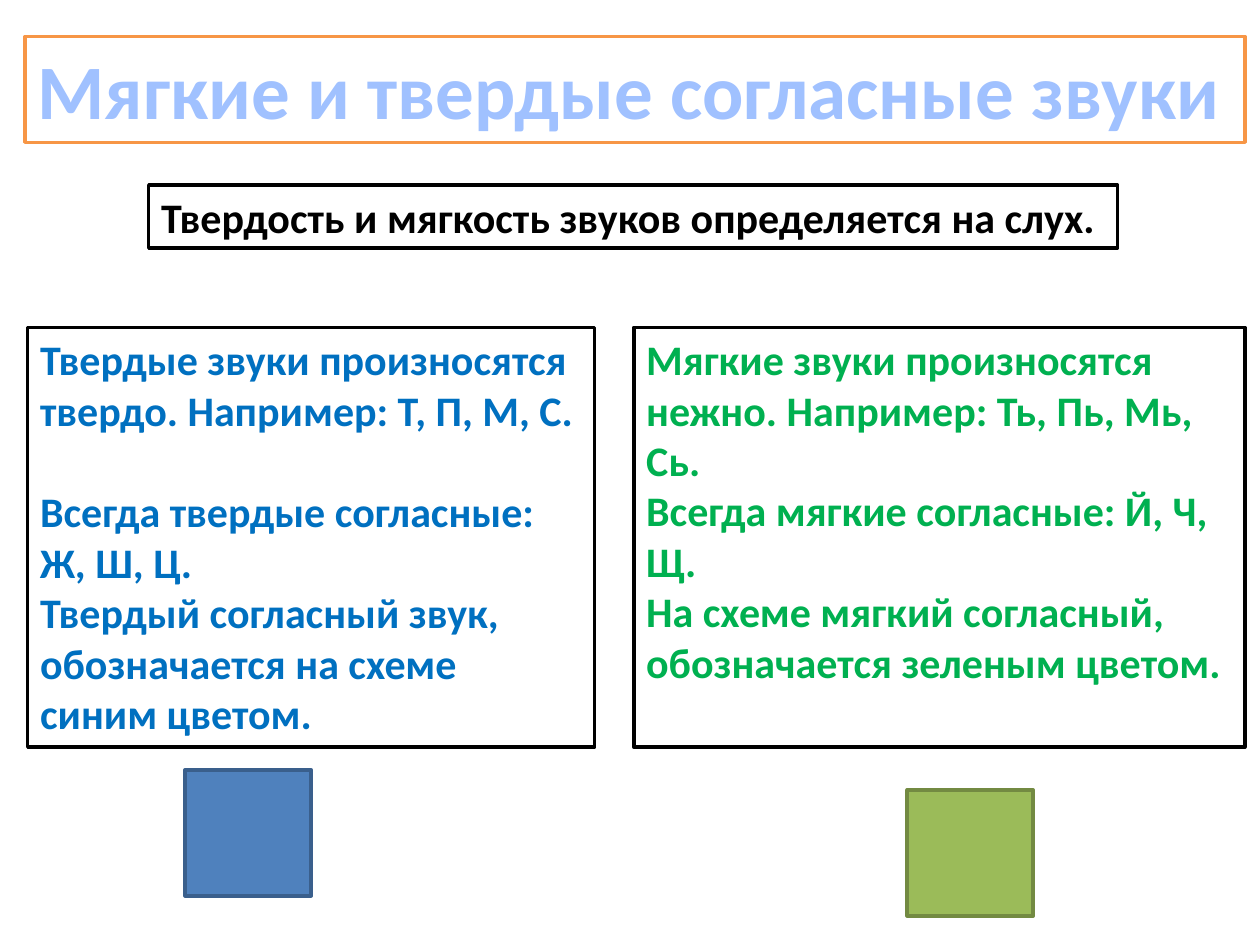
from dataclasses import dataclass

from lxml import etree
from pptx import Presentation
from pptx import util as u
from pptx.dml.color import RGBColor
from pptx.enum import shapes, text
from pptx.oxml import parse_xml

WIDTH, HEIGHT = 10, 7.5
LEFT, RIGHT = 0.22, 9.88
COLUMNS_TOP, COLUMNS_HEIGHT = 2.6, 3.33
BODY_SIZE = 24
BLANK_LINE = 29.3
DRAWING_NS = "http://schemas.openxmlformats.org/drawingml/2006/main"
TITLE_GRADIENT = ((0, "BFD3F9"), (9, "A0C1FF"), (50, "003D85"), (79, "A0C1FF"), (100, "BFD3F9"))


@dataclass
class Frame:
    left: float
    top: float
    width: float
    height: float
    fill: str
    line: str


@dataclass
class Note:
    frame: Frame
    paragraphs: tuple[str, ...]
    color: str
    size: float = BODY_SIZE
    gap_before: int | None = None  # index of the paragraph set one line lower


def rgb(color: str) -> RGBColor:
    return RGBColor.from_string(color)


def draw_frame(slide, frame: Frame):
    box = slide.shapes.add_shape(
        shapes.MSO_SHAPE.RECTANGLE,
        *(u.Inches(v) for v in (frame.left, frame.top, frame.width, frame.height)))
    box.shadow.inherit = False
    box.fill.solid()
    box.fill.fore_color.rgb = rgb(frame.fill)
    box.line.color.rgb = rgb(frame.line)
    box.line.width = u.Pt(2)
    return box


def draw_note(slide, note: Note):
    body = draw_frame(slide, note.frame).text_frame
    body.word_wrap = True
    body.vertical_anchor = text.MSO_ANCHOR.TOP
    body.text = "\n".join(note.paragraphs)
    for index, paragraph in enumerate(body.paragraphs):
        paragraph.alignment = text.PP_ALIGN.LEFT
        if index == note.gap_before:
            paragraph.space_before = u.Pt(BLANK_LINE)
        for run in paragraph.runs:
            run.font.name = "Calibri"
            run.font.size = u.Pt(note.size)
            run.font.bold = True
            run.font.color.rgb = rgb(note.color)
    return body


def apply_title_effect(run):
    """Give the run a vertical gradient and a thin outline."""
    properties = run.font._element if hasattr(run.font, "_element") else run._r.get_or_add_rPr()
    solid = properties.find(f"{{{DRAWING_NS}}}solidFill")
    stops = "".join(
        f'<a:gs pos="{share * 1000}"><a:srgbClr val="{color}"/></a:gs>'
        for share, color in TITLE_GRADIENT)
    gradient = parse_xml(
        f'<a:gradFill xmlns:a="{DRAWING_NS}"><a:gsLst>{stops}</a:gsLst>'
        '<a:lin ang="5400000" scaled="0"/></a:gradFill>')
    properties.replace(solid, gradient)
    outline = etree.Element(f"{{{DRAWING_NS}}}ln", w=str(u.Pt(0.83)))
    outline_fill = etree.SubElement(outline, f"{{{DRAWING_NS}}}solidFill")
    etree.SubElement(outline_fill, f"{{{DRAWING_NS}}}srgbClr", val="467AB8")
    properties.insert(0, outline)


def main():
    deck = Presentation()
    deck.slide_width, deck.slide_height = u.Inches(WIDTH), u.Inches(HEIGHT)
    slide = deck.slides.add_slide(deck.slide_layouts[6])

    title = Note(Frame(0.2, 0.29, RIGHT - 0.2, 0.84, "FFFFFF", "F79646"),
                 ("Мягкие и твердые согласные звуки",), "A0C1FF", size=44)
    rule = Note(Frame(1.18, 1.47, 7.69, 0.5, "FFFFFF", "000000"),
                ("Твердость и мягкость звуков определяется на слух.",), "000000")
    soft = Note(
        Frame(5.03, COLUMNS_TOP, RIGHT - 5.03, COLUMNS_HEIGHT, "FFFFFF", "000000"),
        ("Мягкие звуки произносятся нежно. Например: Ть, Пь, Мь, Сь.",
         "Всегда мягкие согласные: Й, Ч, Щ.",
         "На схеме мягкий согласный,",
         "обозначается зеленым цветом."),
        "00B050")
    hard = Note(
        Frame(LEFT, COLUMNS_TOP, 4.5, COLUMNS_HEIGHT, "FFFFFF", "000000"),
        ("Твердые звуки произносятся",
         "твердо. Например: Т, П, М, С.",
         "Всегда твердые согласные:",
         "Ж, Ш, Ц.",
         "Твердый согласный звук,",
         "обозначается на схеме",
         "синим цветом."),
        "0070C0", gap_before=2)
    soft_sign = Frame(7.2, 6.27, 1, 1, "9BBB59", "738A42")
    hard_sign = Frame(1.47, 6.11, 1, 1, "4F81BD", "3A5F8C")

    apply_title_effect(draw_note(slide, title).paragraphs[0].runs[0])
    draw_note(slide, rule)
    for sign in (soft_sign, hard_sign):
        draw_frame(slide, sign)
    for column in (soft, hard):
        draw_note(slide, column)

    deck.save("out.pptx")


if __name__ == "__main__":
    main()
